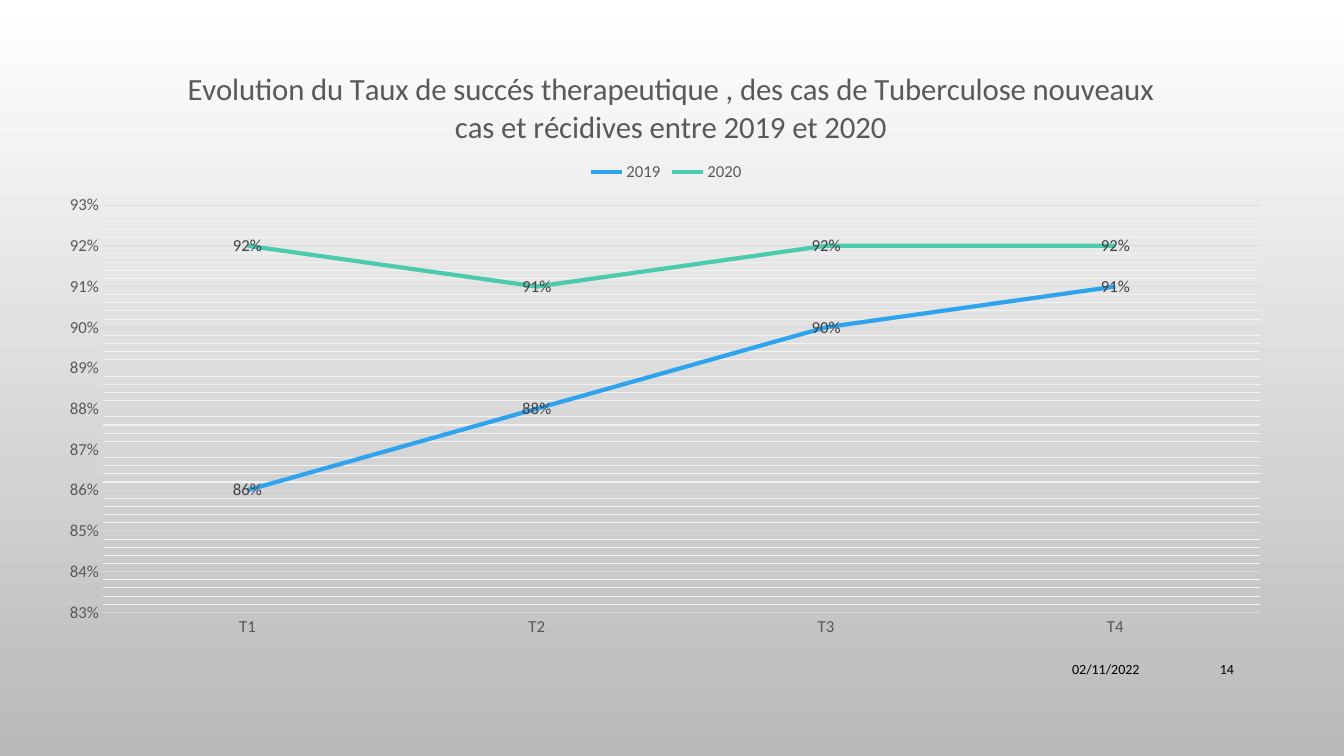
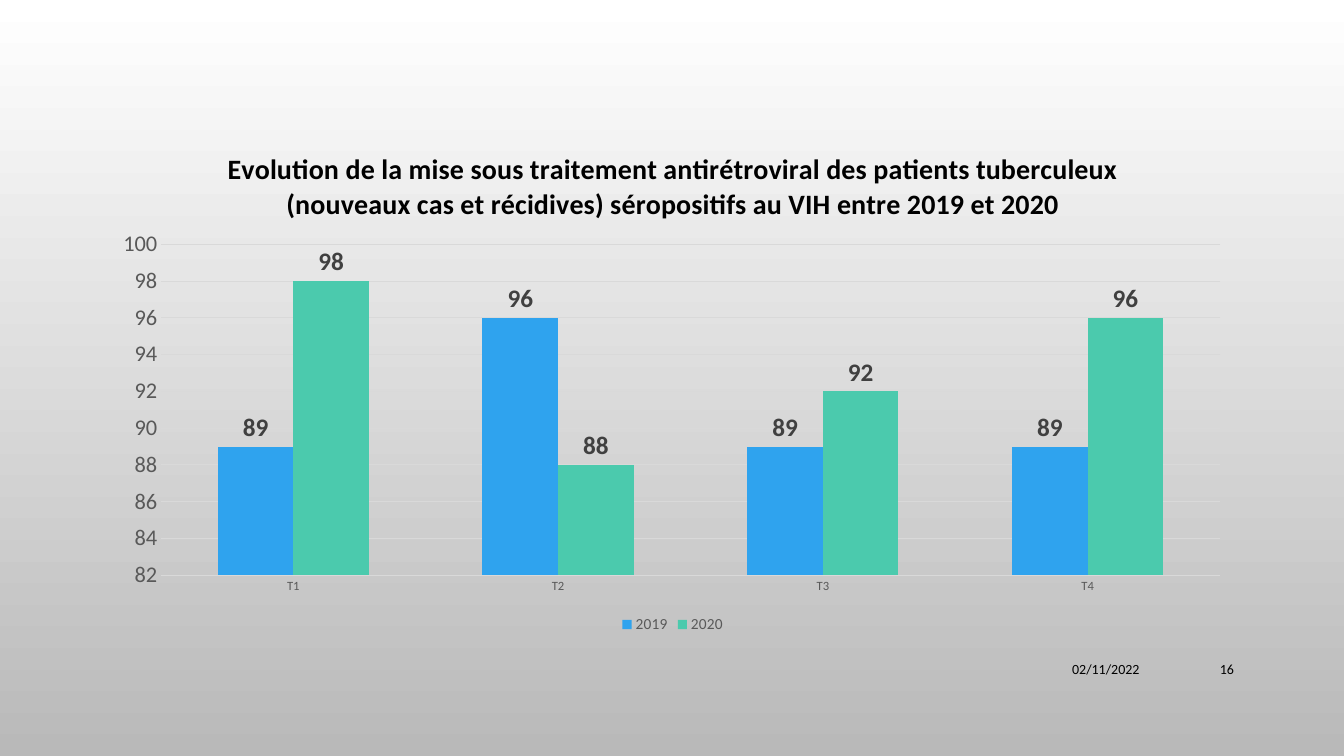
from copy import deepcopy

from lxml import etree
from pptx import Presentation
from pptx.chart.data import CategoryChartData
from pptx.dml.color import RGBColor
from pptx.enum.chart import XL_CHART_TYPE, XL_LABEL_POSITION, XL_LEGEND_POSITION, XL_TICK_MARK
from pptx.enum.text import MSO_ANCHOR, PP_ALIGN
from pptx.oxml.ns import qn
from pptx.util import Pt

LINE, COLUMN = XL_CHART_TYPE.LINE, XL_CHART_TYPE.COLUMN_CLUSTERED
CENTER, OUTSIDE_END = XL_LABEL_POSITION.CENTER, XL_LABEL_POSITION.OUTSIDE_END
TOP, BOTTOM = XL_LEGEND_POSITION.TOP, XL_LEGEND_POSITION.BOTTOM
NO_TICK = XL_TICK_MARK.NONE
MIDDLE, RIGHT = MSO_ANCHOR.MIDDLE, PP_ALIGN.RIGHT

WHITE = RGBColor(0xFF, 0xFF, 0xFF)
BLACK = RGBColor(0x00, 0x00, 0x00)
SILVER = RGBColor(0xB9, 0xB9, 0xB9)
GRID = RGBColor(0xD9, 0xD9, 0xD9)
MINOR_GRID = RGBColor(0xF2, 0xF2, 0xF2)
AXIS_GRAY = RGBColor(0x59, 0x59, 0x59)
LABEL_GRAY = RGBColor(0x40, 0x40, 0x40)
YEAR_COLORS = {"2019": RGBColor(0x2F, 0xA3, 0xEE), "2020": RGBColor(0x4B, 0xCA, 0xAD)}

FONT = "Calibri"
QUARTERS = ["T1", "T2", "T3", "T4"]
REPORT_DATE = "02/11/2022"
FOOTER_TOP, FOOTER_HEIGHT = 463, 29
PLOT_AREAS = {LINE: (73.5, 146.5, 826.5, 291), COLUMN: (115, 174.5, 756.5, 236.5)}


def set_values(target, values):
    for attribute, value in values.items():
        setattr(target, attribute, value)


def set_font(font, size, color, bold=False):
    set_values(font, {"name": FONT, "size": Pt(size), "bold": bold})
    font.color.rgb = color


def set_line(line, color, width):
    line.color.rgb = color
    line.width = Pt(width)


def add_slide(deck):
    """Add a blank slide with the white-to-silver background."""
    slide = deck.slides.add_slide(deck.slide_layouts[6])
    fill = slide.background.fill
    fill.gradient()
    fill.gradient_angle = 270
    for stop, color in zip(fill.gradient_stops, (WHITE, SILVER)):
        stop.color.rgb = color
    return slide


def add_footer(slide, number):
    for text, left, width in ((REPORT_DATE, 605, 216), (number, 828, 60.5)):
        box = slide.shapes.add_textbox(Pt(left), Pt(FOOTER_TOP), Pt(width), Pt(FOOTER_HEIGHT))
        set_values(box.text_frame, {"word_wrap": True, "vertical_anchor": MIDDLE})
        paragraph = box.text_frame.paragraphs[0]
        set_values(paragraph, {"text": text, "alignment": RIGHT})
        set_font(paragraph.font, 10, BLACK)


def place(part, frame, area, after=None):
    """Pin a chart part to a slide area: left, top and, for the plot, width, height."""
    for old in part.findall(qn("c:layout")):
        part.remove(old)
    layout = etree.Element(qn("c:layout"))
    manual = etree.SubElement(layout, qn("c:manualLayout"))
    left, top, width, height = frame
    settings = {"xMode": "edge", "yMode": "edge"}
    if len(area) == 4:
        settings = {"layoutTarget": "inner", **settings}
    settings["x"] = (area[0] - left) / width
    settings["y"] = (area[1] - top) / height
    if len(area) == 4:
        settings["w"] = area[2] / width
        settings["h"] = area[3] / height
    for tag, value in settings.items():
        etree.SubElement(manual, qn("c:" + tag)).set("val", str(value))
    if after:
        part.find(qn(after)).addnext(layout)
    else:
        part.insert(0, layout)


def add_chart(slide, kind, frame, rates, number_format):
    data = CategoryChartData(number_format=number_format)
    data.categories = QUARTERS
    for year, values in rates.items():
        data.add_series(year, values)
    chart = slide.shapes.add_chart(kind, *map(Pt, frame), data).chart
    set_font(chart.font, 10, BLACK)
    place(chart._chartSpace.chart.plotArea, frame, PLOT_AREAS[kind])
    return chart


def add_title(chart, frame, text, corner, size, color, bold=False):
    title = chart.chart_title
    title.text_frame.text = text
    set_font(title.text_frame.paragraphs[0].runs[0].font, size, color, bold)
    place(title._element, frame, corner, "c:tx")


def add_legend(chart, frame, position, corner, size):
    chart.has_legend = True
    set_values(chart.legend, {"position": position, "include_in_layout": False})
    set_font(chart.legend.font, size, AXIS_GRAY)
    place(chart.legend._element, frame, corner, "c:legendPos")


def style_axes(chart, category_size, value_size, scale, number_format):
    for axis, size in ((chart.category_axis, category_size), (chart.value_axis, value_size)):
        set_values(axis, {"major_tick_mark": NO_TICK, "minor_tick_mark": NO_TICK})
        set_font(axis.tick_labels.font, size, AXIS_GRAY)
        axis.format.line.fill.background()
    rates_axis = chart.value_axis
    set_values(rates_axis, scale)
    set_values(rates_axis.tick_labels, {"number_format": number_format,
                                        "number_format_is_linked": False})
    set_line(rates_axis.major_gridlines.format.line, GRID, 0.75)


def color_minor_gridlines(axis, color):
    """Give the minor gridlines the major ones' line in another colour."""
    major, minor = (axis._element.find(qn(tag))
                    for tag in ("c:majorGridlines", "c:minorGridlines"))
    line_style = deepcopy(major.find(qn("c:spPr")))
    next(line_style.iter(qn("a:srgbClr"))).set("val", str(color))
    minor.append(line_style)


def add_labels(series, position, size, number_format, bold=False):
    labels = series.data_labels
    set_values(labels, {"show_value": True, "position": position,
                        "number_format": number_format, "number_format_is_linked": False})
    set_font(labels.font, size, LABEL_GRAY, bold)


def add_success_chart(slide):
    frame = (32.4, 25.2, 885.6, 437.8)
    rates = {"2019": (0.86, 0.88, 0.9, 0.91), "2020": (0.92, 0.91, 0.92, 0.92)}
    chart = add_chart(slide, LINE, frame, rates, "0%")
    add_title(chart, frame, "Evolution du Taux de succés therapeutique , des cas de Tuberculose "
              "nouveaux cas et récidives entre 2019 et 2020", (130, 44), 22, AXIS_GRAY)
    add_legend(chart, frame, TOP, (418, 113), 12)
    style_axes(chart, 12, 12, {"minimum_scale": 0.83, "maximum_scale": 0.93,
                               "major_unit": 0.01, "minor_unit": 0.002,
                               "has_minor_gridlines": True}, "0%")
    color_minor_gridlines(chart.value_axis, MINOR_GRID)
    set_line(chart.category_axis.format.line, GRID, 0.75)
    for series in chart.plots[0].series:
        series.smooth = False
        set_line(series.format.line, YEAR_COLORS[series.name], 3)
        add_labels(series, CENTER, 12, "0%")


def add_treatment_chart(slide):
    frame = (72, 85, 815.8, 371.5)
    rates = {"2019": (89, 96, 89, 89), "2020": (98, 88, 92, 96)}
    chart = add_chart(slide, COLUMN, frame, rates, "General")
    add_title(chart, frame, "Evolution de la mise sous traitement antirétroviral des patients "
              "tuberculeux (nouveaux cas et récidives) séropositifs au VIH entre 2019 et 2020",
              (159, 103), 20, BLACK, bold=True)
    add_legend(chart, frame, BOTTOM, (441, 438), 11)
    style_axes(chart, 9, 16, {"minimum_scale": 82, "maximum_scale": 100, "major_unit": 2},
               "General")
    set_values(chart.plots[0], {"gap_width": 150, "vary_by_categories": False})
    for series in chart.plots[0].series:
        series.format.fill.solid()
        series.format.fill.fore_color.rgb = YEAR_COLORS[series.name]
        add_labels(series, OUTSIDE_END, 18, "General", bold=True)


def main():
    deck = Presentation()
    set_values(deck, {"slide_width": Pt(960), "slide_height": Pt(540)})
    for number, add_content in (("14", add_success_chart), ("16", add_treatment_chart)):
        slide = add_slide(deck)
        add_footer(slide, number)
        add_content(slide)
    deck.save("out.pptx")


if __name__ == "__main__":
    main()
